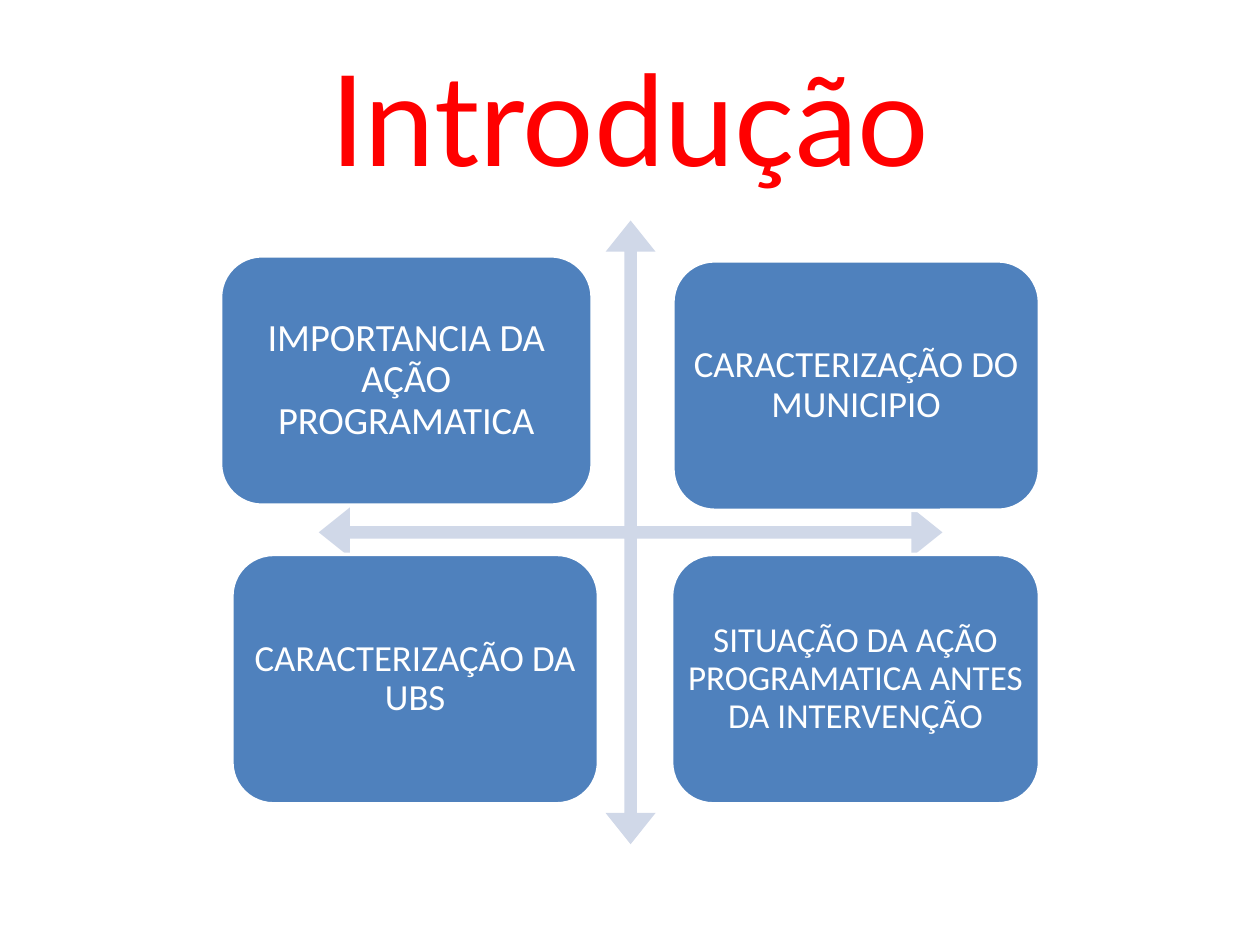
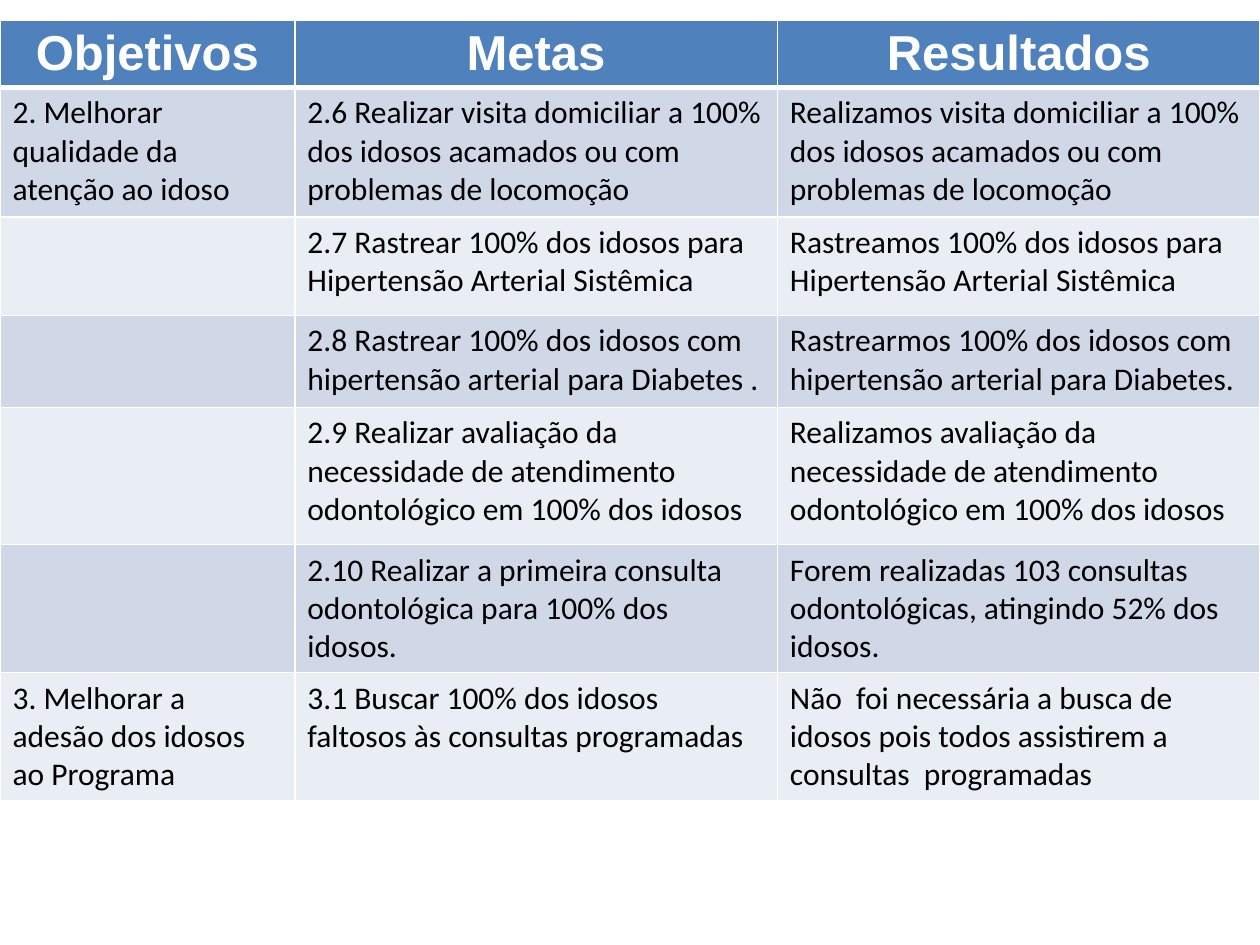
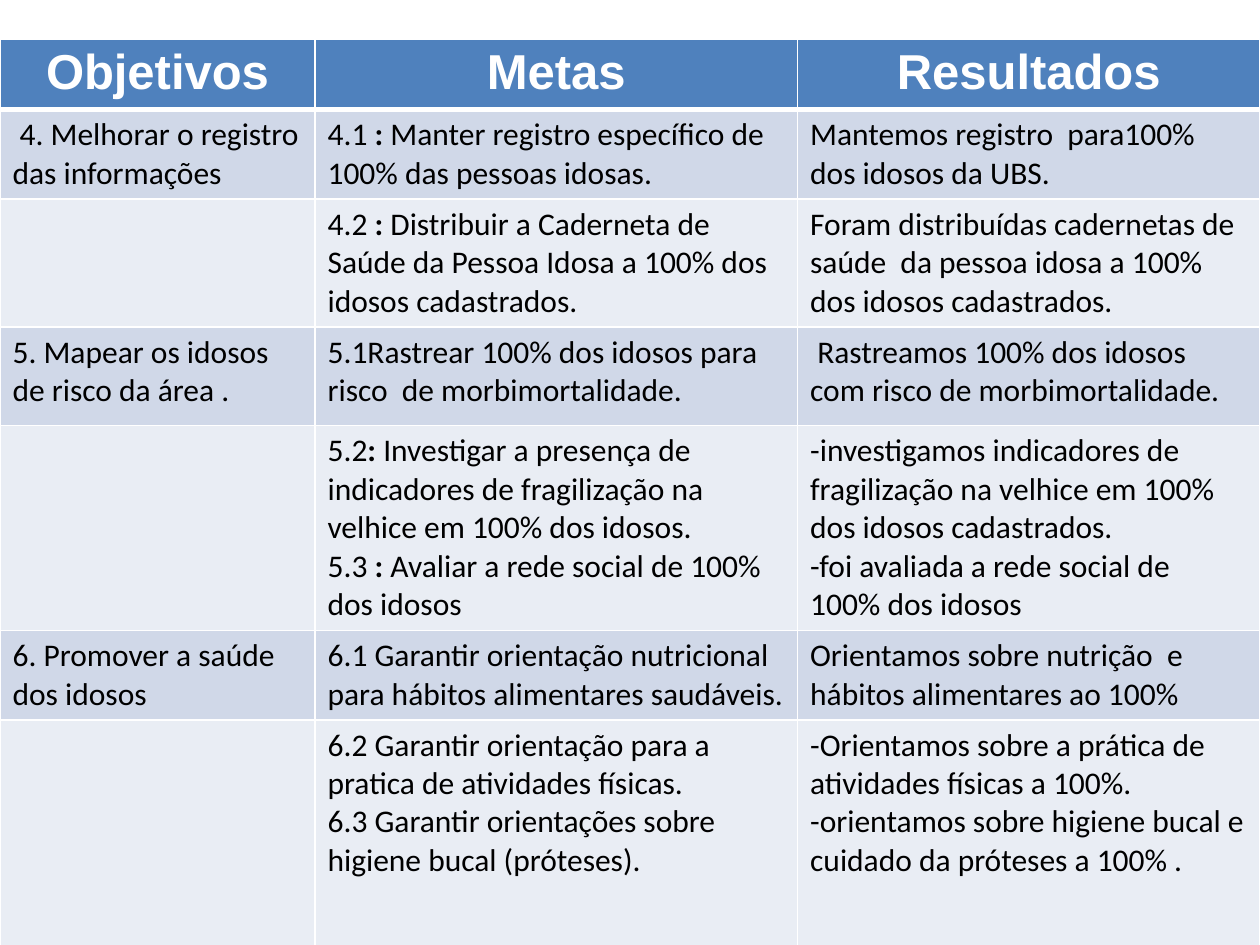
"""Build three slides on the care of the elderly: introduction and results tables."""
from dataclasses import dataclass
from typing import Any, NamedTuple

from lxml.etree import SubElement
from pptx import Presentation
from pptx.dml.color import RGBColor
from pptx.enum.shapes import MSO_SHAPE as Preset
from pptx.enum.text import MSO_ANCHOR as Anchor, MSO_AUTO_SIZE as AutoSize, PP_ALIGN as Align
from pptx.oxml.ns import qn
from pptx.util import Pt

PX = 9144


@dataclass(frozen=True)
class Theme:
    """Colours, fonts and type sizes of the slides."""
    title: str = "FF0000"
    accent: str = "4F81BD"
    band_dark: str = "D0D8E8"
    band_light: str = "E9EDF4"
    white: str = "FFFFFF"
    ink: str = "000000"
    title_font: str = "Lato"
    body_font: str = "Calibri"
    header_font: str = "Arial"
    title_size: int = 72
    header_size: int = 28
    body_size: int = 18
    rule: int = 1
    header_rule: int = 3


class Frame(NamedTuple):
    """A place on the slide in px."""
    left: int
    top: int
    width: int
    height: int

    def emu(self) -> list[int]:
        """Give the four lengths in EMU."""
        return [length * PX for length in self]


class Topic(NamedTuple):
    """One rounded box of the introduction."""
    frame: Frame
    text: str
    size: int


class Report(NamedTuple):
    """One table of objectives, targets and results."""
    frame: Frame
    columns: list[int]
    heights: list[int]
    rows: list[tuple[str, str, str]]


THEME = Theme()
HEADINGS = ("Objetivos", "Metas", "Resultados")
TITLE_FRAME = Frame(50, 30, 900, 125)
CROSS_FRAME = Frame(253, 175, 495, 495)
CROSS_PROPORTIONS = (0.02, 0.04, 0.05)

TOPICS = [
    Topic(Frame(175, 203, 295, 198), "IMPORTANCIA DA AÇÃO PROGRAMATICA", 22),
    Topic(Frame(534, 207, 291, 198), "CARACTERIZAÇÃO DO MUNICIPIO", 21),
    Topic(Frame(184, 440, 291, 198), "CARACTERIZAÇÃO DA UBS", 21),
    Topic(Frame(533, 440, 292, 198), "SITUAÇÃO DA AÇÃO PROGRAMATICA ANTES DA INTERVENÇÃO", 20),
]

REPORTS = [
    Report(Frame(0, 16, 1000, 620), [234, 383, 383], [53, 103, 78, 73, 109, 53, 53], [
        ("2. Melhorar qualidade da atenção ao idoso",
         "2.6 Realizar visita domiciliar a 100% dos idosos acamados ou com problemas de locomoção",
         "Realizamos visita domiciliar a 100% dos idosos acamados ou com problemas de locomoção"),
        ("",
         "2.7 Rastrear 100% dos idosos para Hipertensão Arterial Sistêmica",
         "Rastreamos 100% dos idosos para Hipertensão Arterial Sistêmica"),
        ("",
         "2.8 Rastrear 100% dos idosos com hipertensão arterial para Diabetes .",
         "Rastrearmos 100% dos idosos com hipertensão arterial para Diabetes."),
        ("",
         "2.9 Realizar avaliação da necessidade de atendimento odontológico em 100% dos idosos",
         "Realizamos avaliação da necessidade de atendimento odontológico em 100% dos idosos"),
        ("",
         "2.10 Realizar a primeira consulta odontológica para 100% dos idosos.",
         "Forem realizadas 103 consultas odontológicas, atingindo 52% dos idosos."),
        ("3. Melhorar a adesão dos idosos ao Programa",
         "3.1 Buscar 100% dos idosos faltosos às consultas programadas",
         "Não  foi necessária a busca de idosos pois todos assistirem a consultas  programadas"),
    ]),
    Report(Frame(0, 31, 1000, 752), [250, 383, 367], [56, 68, 91, 78, 95, 66, 218], [
        (" 4. Melhorar o registro das informações",
         "4.1 : Manter registro específico de 100% das pessoas idosas.",
         "Mantemos registro  para100% dos idosos da UBS."),
        ("",
         "4.2 : Distribuir a Caderneta de Saúde da Pessoa Idosa a 100% dos idosos cadastrados.",
         "Foram distribuídas cadernetas de saúde  da pessoa idosa a 100% dos idosos cadastrados."),
        ("5. Mapear os idosos de risco da área .",
         "5.1Rastrear 100% dos idosos para risco  de morbimortalidade.",
         " Rastreamos 100% dos idosos  com risco de morbimortalidade."),
        ("",
         "5.2: Investigar a presença de indicadores de fragilização na velhice em 100% dos idosos.\n"
         "5.3 : Avaliar a rede social de 100% dos idosos",
         "-investigamos indicadores de fragilização na velhice em 100% dos idosos cadastrados.\n"
         "-foi avaliada a rede social de 100% dos idosos"),
        ("6. Promover a saúde dos idosos",
         "6.1 Garantir orientação nutricional para hábitos alimentares saudáveis.",
         "Orientamos sobre nutrição  e hábitos alimentares ao 100%"),
        ("",
         "6.2 Garantir orientação para a pratica de atividades físicas.\n"
         "6.3 Garantir orientações sobre higiene bucal (próteses).",
         "-Orientamos sobre a prática de atividades físicas a 100%.\n"
         "-orientamos sobre higiene bucal e cuidado da próteses a 100% ."),
    ]),
]


def assign(target: Any, values: dict[str, Any]) -> None:
    """Set each named attribute of the target."""
    for name, value in values.items():
        setattr(target, name, value)


def paint(filled: Any, colour: str) -> None:
    """Give a shape or cell a solid fill."""
    filled.fill.solid()
    filled.fill.fore_color.rgb = RGBColor.from_string(colour)


def style_font(font: Any, family: str, size: int, colour: str, bold: bool = False) -> None:
    """Set family, size, colour and weight of a font."""
    assign(font, {"name": family, "size": Pt(size), "bold": bold})
    font.color.rgb = RGBColor.from_string(colour)


def add_title(slide: Any, text: str) -> None:
    """Place and format the title placeholder."""
    title = slide.shapes.title
    assign(title, dict(zip(("left", "top", "width", "height"), TITLE_FRAME.emu())))
    assign(title.text_frame, {"text": text, "word_wrap": True, "auto_size": AutoSize.NONE,
                              "vertical_anchor": Anchor.MIDDLE})
    heading = title.text_frame.paragraphs[0]
    heading.alignment = Align.CENTER
    style_font(heading.runs[0].font, THEME.title_font, THEME.title_size, THEME.title)


def add_cross(shapes: Any) -> None:
    """Draw the four-way arrow behind the topics."""
    cross = shapes.add_shape(Preset.QUAD_ARROW, *CROSS_FRAME.emu())
    cross.shadow.inherit = False
    for index, proportion in enumerate(CROSS_PROPORTIONS):
        cross.adjustments[index] = proportion
    paint(cross, THEME.band_dark)
    cross.line.fill.background()


def add_topic(shapes: Any, topic: Topic) -> None:
    """Draw one rounded topic box with its text."""
    box = shapes.add_shape(Preset.ROUNDED_RECTANGLE, *topic.frame.emu())
    box.shadow.inherit = False
    paint(box, THEME.accent)
    box.line.color.rgb = RGBColor.from_string(THEME.white)
    box.line.width = Pt(2)
    margins = {f"margin_{side}": 0 for side in ("left", "top", "right", "bottom")}
    assign(box.text_frame, {"text": topic.text, "word_wrap": True,
                            "vertical_anchor": Anchor.MIDDLE, **margins})
    label = box.text_frame.paragraphs[0]
    assign(label, {"alignment": Align.CENTER, "line_spacing": 0.9})
    style_font(label.runs[0].font, THEME.body_font, topic.size, THEME.white)


def add_borders(cell: Any, top: int, bottom: int) -> None:
    """Rule the four sides of a cell in white."""
    properties = cell._tc.get_or_add_tcPr()
    for side, points in zip("LRTB", (THEME.rule, THEME.rule, top, bottom)):
        border = SubElement(properties, qn(f"a:ln{side}"), w=str(Pt(points)))
        SubElement(SubElement(border, qn("a:solidFill")), qn("a:srgbClr"), val=THEME.white)


def write_heading(cell: Any, text: str) -> None:
    """Write a centred column heading."""
    cell.text = text
    heading = cell.text_frame.paragraphs[0]
    heading.alignment = Align.CENTER
    style_font(heading.runs[0].font, THEME.header_font, THEME.header_size, THEME.white, True)


def write_entry(cell: Any, text: str) -> None:
    """Write a body cell with its colons in bold."""
    cell.text = text
    for paragraph in cell.text_frame.paragraphs:
        before, colon, after = paragraph.text.partition(":")
        paragraph.clear()
        paragraph.font.size = Pt(THEME.body_size)
        for part in filter(None, (before, colon, after)):
            run = paragraph.add_run()
            run.text = part
            style_font(run.font, THEME.body_font, THEME.body_size, THEME.ink, part == ":")


def add_report(slide: Any, report: Report) -> None:
    """Draw a banded table of objectives, targets and results."""
    table = slide.shapes.add_table(len(report.heights), len(HEADINGS), *report.frame.emu()).table
    for column, width in zip(table.columns, report.columns):
        column.width = width * PX
    for row, height in zip(table.rows, report.heights):
        row.height = height * PX
    for index, texts in enumerate([HEADINGS, *report.rows]):
        band = THEME.band_dark if index % 2 else THEME.band_light
        top = THEME.header_rule if index == 1 else THEME.rule
        bottom = THEME.header_rule if index == 0 else THEME.rule
        write = write_entry if index else write_heading
        for cell, text in zip(table.rows[index].cells, texts):
            add_borders(cell, top, bottom)
            paint(cell, band if index else THEME.accent)
            write(cell, text)


def main() -> None:
    """Build and save the slides."""
    deck = Presentation()
    assign(deck, {"slide_width": 1000 * PX, "slide_height": 750 * PX})
    title_only, blank = deck.slide_layouts[5], deck.slide_layouts[6]

    introduction = deck.slides.add_slide(title_only)
    add_title(introduction, "Introdução")
    diagram = introduction.shapes.add_group_shape().shapes
    add_cross(diagram)
    for topic in TOPICS:
        add_topic(diagram, topic)

    for report in REPORTS:
        add_report(deck.slides.add_slide(blank), report)
    deck.save("out.pptx")


if __name__ == "__main__":
    main()
